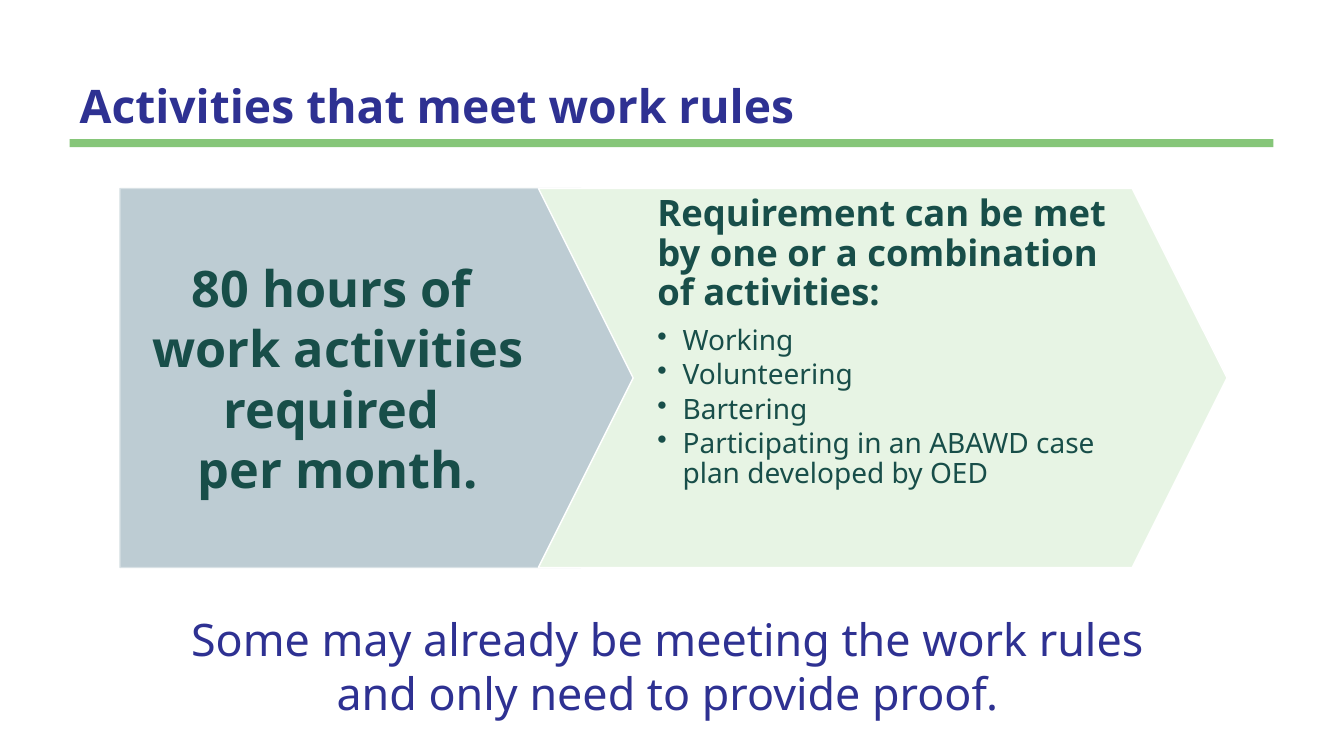
"""Build the slide on activities that meet the work rules."""
from lxml import etree
from pptx import Presentation
from pptx import util as u
from pptx.dml.color import RGBColor
from pptx.enum import shapes, text
from pptx.oxml.ns import qn

FONT = "Noto Sans"
NAVY, GREEN, TEAL = "2E3192", "86C679", "184E49"
CENTER = text.PP_ALIGN.CENTER


def write(frame, content, size, color, bold=False, align=text.PP_ALIGN.LEFT,
          spacing=1.0, after=0, bullet=False):
    """Fill the empty first paragraph of a frame, or append a new one."""
    paragraph = frame.paragraphs[-1]
    if paragraph.runs:
        paragraph = frame.add_paragraph()
    paragraph.alignment = align
    paragraph.line_spacing = spacing
    paragraph.space_before = u.Pt(0)
    paragraph.space_after = u.Pt(after)
    if bullet:
        properties = paragraph._p.get_or_add_pPr()
        properties.set("marL", str(u.Inches(0.25)))
        properties.set("indent", str(u.Inches(-0.25)))
        etree.SubElement(properties, qn("a:buChar"), char="•")
    run = paragraph.add_run()
    run.text = content
    run.font.name = FONT
    run.font.size = u.Pt(size)
    run.font.bold = bold
    run.font.color.rgb = RGBColor.from_string(color)


def add_block(kind, left, top, width, height, fill, line=None):
    """Add a flat filled shape with an optional thin outline."""
    shape = slide.shapes.add_shape(
        kind, u.Inches(left), u.Inches(top), u.Inches(width), u.Inches(height))
    shape.shadow.inherit = False
    shape.fill.solid()
    shape.fill.fore_color.rgb = RGBColor.from_string(fill)
    if line:
        shape.line.color.rgb = RGBColor.from_string(line)
        shape.line.width = u.Pt(1)
    else:
        shape.line.fill.background()
    return shape


presentation = Presentation()
presentation.slide_width = u.Inches(13.33)
presentation.slide_height = u.Inches(7.5)
slide = presentation.slides.add_slide(presentation.slide_layouts[5])

title = slide.shapes.title
title.left, title.top = u.Inches(0.69), u.Inches(0.47)
title.width, title.height = u.Inches(11.95), u.Inches(0.9)
title.text_frame.vertical_anchor = text.MSO_ANCHOR.BOTTOM
write(title.text_frame, "Activities that meet work rules", 33, NAVY,
      bold=True, spacing=0.9)
add_block(shapes.MSO_SHAPE.RECTANGLE, 0.69, 1.38, 11.94, 0.08, GREEN)

hours = add_block(shapes.MSO_SHAPE.PENTAGON, 1.19, 1.87, 5.51, 3.76, "BDCCD3", "D8E1E5")
activities = add_block(shapes.MSO_SHAPE.CHEVRON, 5.34, 1.87, 6.83, 3.76, "E7F4E4", "FFFFFF")
for arrow, anchor, right, vertical in (
        (hours, text.MSO_ANCHOR.MIDDLE, 0.96, 0.1),
        (activities, text.MSO_ANCHOR.TOP, 0.24, 0.07)):
    arrow.adjustments[0] = 0.25
    frame = arrow.text_frame
    frame.word_wrap = True
    frame.vertical_anchor = anchor
    frame.margin_left, frame.margin_right = u.Inches(0.24), u.Inches(right)
    frame.margin_top = frame.margin_bottom = u.Inches(vertical)

for line in ("80 hours of ", "work activities required ", "per month."):
    write(hours.text_frame, line, 36, TEAL, bold=True, align=CENTER)

write(activities.text_frame,
      "Requirement can be met by one or a combination of activities:",
      26, TEAL, bold=True, spacing=0.9, after=9)
for activity in ("Working", "Volunteering", "Bartering",
                 "Participating in an ABAWD case plan developed by OED"):
    write(activities.text_frame, activity, 20, TEAL, spacing=0.9, after=3, bullet=True)

note = slide.shapes.add_textbox(
    u.Inches(1.19), u.Inches(6.02), u.Inches(10.98), u.Inches(1.18))
note.text_frame.word_wrap = True
note.text_frame.auto_size = text.MSO_AUTO_SIZE.SHAPE_TO_FIT_TEXT
for line in ("Some may already be meeting the work rules ",
             "and only need to provide proof. "):
    write(note.text_frame, line, 32, NAVY, align=CENTER)

presentation.save("out.pptx")
